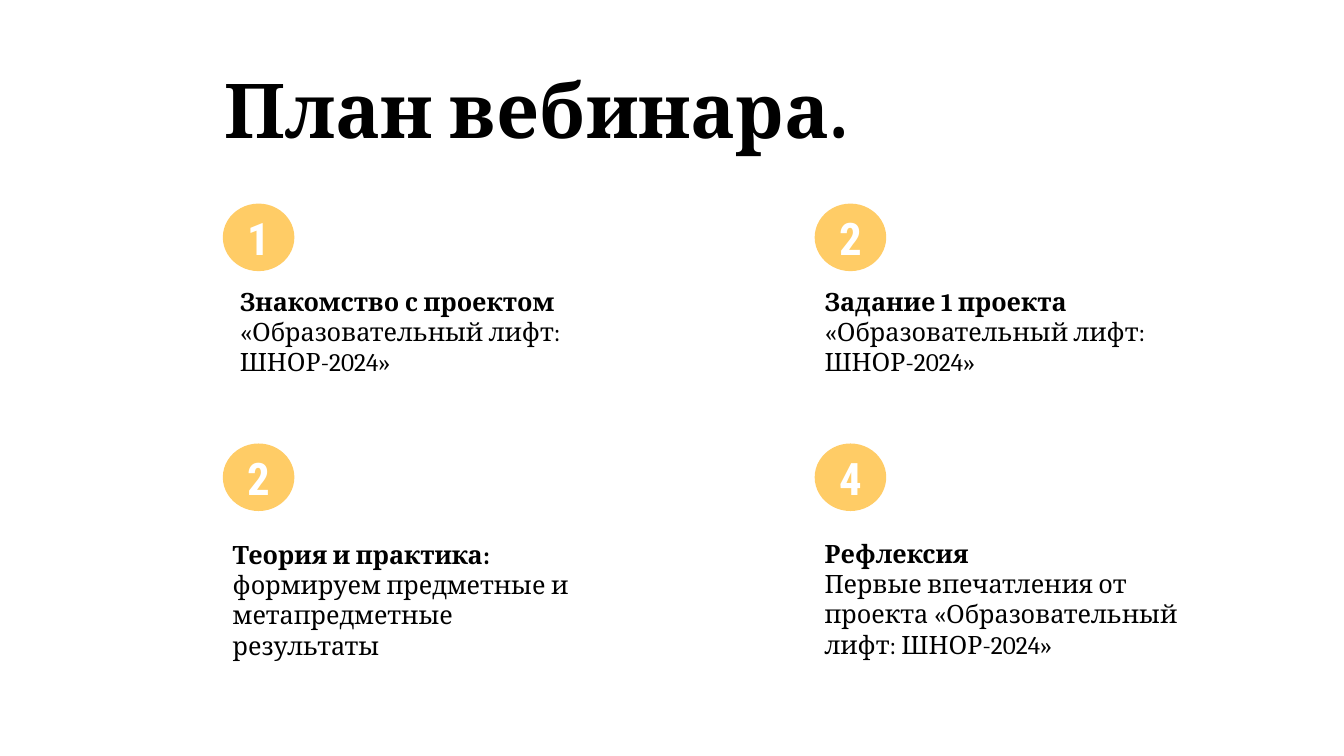
import pptx
import pptx.dml.color
import pptx.enum.shapes
import pptx.enum.text
import pptx.util

PX = 9144
COLORS = {"badge": "FFCC66", "number": "FFFFFF", "text": "000000"}
TEXT_FONT = "Cambria"
NUMBER_FONT = "Roboto Condensed"
COLUMNS = (221, 808)
ROWS = (202, 440)
NUMBERS = ("1", "2", "2", "4")
LIFT = "«Образовательный лифт: ШНОР-2024»"
TOPICS = (
    ((228, 279, 344, 101), [[("Знакомство с проектом ", True), (LIFT, False)]]),
    ((808, 279, 376, 101), [[("Задание 1 проекта ", True), (LIFT, False)]]),
    ((221, 530, 370, 101), [[("Теория и практика:", True)],
                            [("формируем предметные и метапредметные результаты", False)]]),
    ((808, 529, 388, 131), [[("Рефлексия", True)],
                            [("Первые впечатления от проекта " + LIFT, False)]]),
)


def px(*lengths):
    """Turn pixel lengths into EMU."""
    return [pptx.util.Emu(length * PX) for length in lengths]


def rgb(name):
    """Look up a named colour."""
    return pptx.dml.color.RGBColor.from_string(COLORS[name])


def set_font(p, name, size, color):
    """Set the font of a paragraph."""
    p.font.name = name
    p.font.size = pptx.util.Pt(size)
    p.font.color.rgb = rgb(color)


def add_text(s, box, size, paragraphs):
    """Add a text box from paragraphs of (text, bold) runs."""
    tf = s.shapes.add_textbox(*px(*box)).text_frame
    tf.word_wrap = True
    for i, runs in enumerate(paragraphs):
        p = tf.add_paragraph() if i else tf.paragraphs[0]
        set_font(p, TEXT_FONT, size, "text")
        for text, bold in runs:
            r = p.add_run()
            r.text = text
            r.font.bold = bold


def add_badge(s, left, top, number):
    """Add a numbered oval."""
    sp = s.shapes.add_shape(pptx.enum.shapes.MSO_SHAPE.OVAL, *px(left, top, 71, 67))
    sp.shadow.inherit = False
    sp.fill.solid()
    sp.fill.fore_color.rgb = rgb("badge")
    sp.line.fill.background()
    tf = sp.text_frame
    tf.vertical_anchor = pptx.enum.text.MSO_ANCHOR.MIDDLE
    p = tf.paragraphs[0]
    p.text = number
    p.alignment = pptx.enum.text.PP_ALIGN.CENTER
    set_font(p, NUMBER_FONT, 32, "number")
    p.font.bold = True


def main():
    """Build the webinar plan slide."""
    prs = pptx.Presentation()
    prs.slide_width, prs.slide_height = px(1333, 750)
    s = prs.slides.add_slide(prs.slide_layouts[6])
    add_text(s, (213, 57, 667, 101), 54, [[("План вебинара.", True)]])
    for i, number in enumerate(NUMBERS):
        add_badge(s, COLUMNS[i % 2], ROWS[i // 2], number)
    for box, paragraphs in TOPICS:
        add_text(s, box, 18, paragraphs)
    prs.save("out.pptx")


if __name__ == "__main__":
    main()
